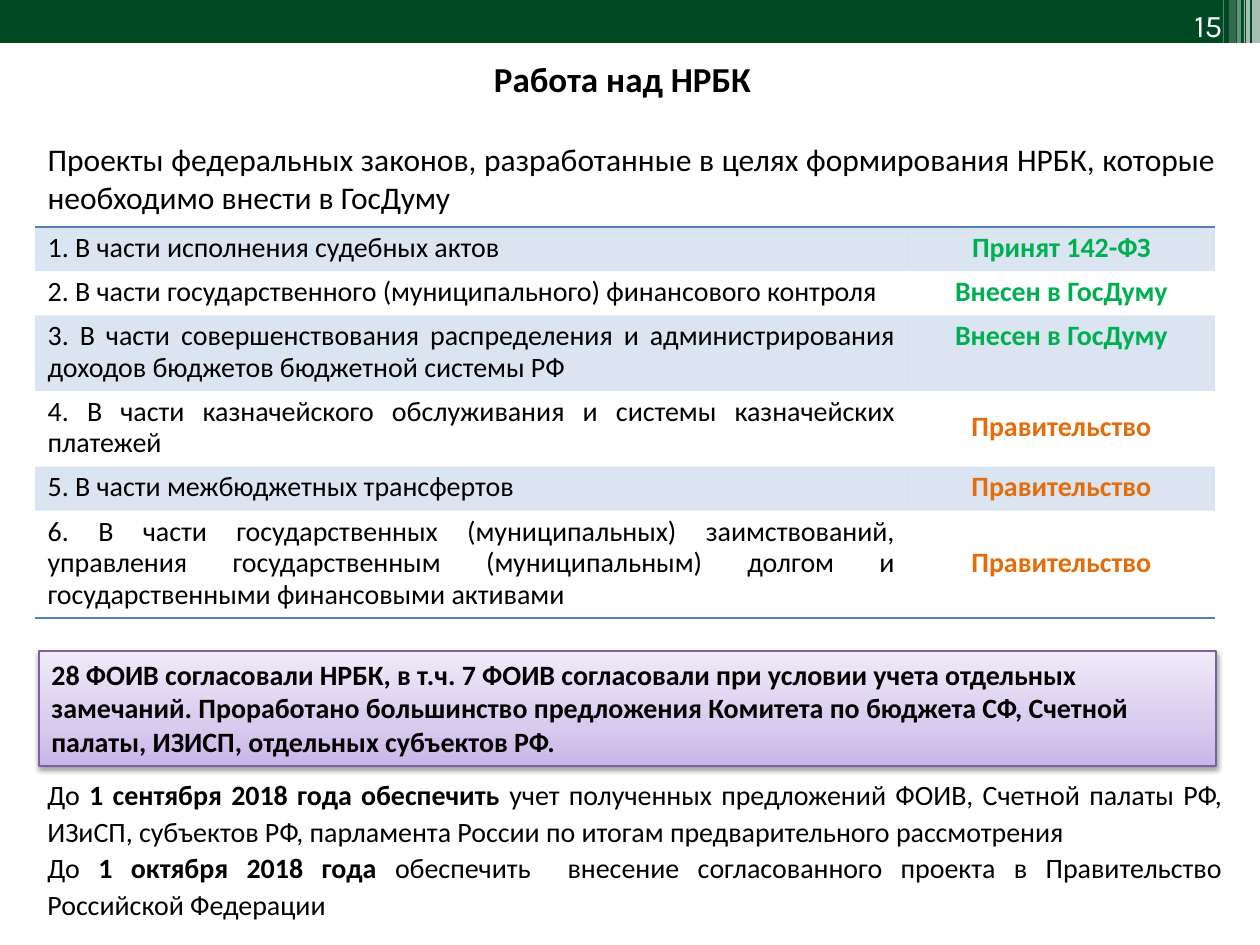
from dataclasses import dataclass

from lxml import etree
from pptx import Presentation
from pptx.dml.color import RGBColor
from pptx.enum.shapes import MSO_SHAPE
from pptx.enum.text import MSO_ANCHOR, MSO_AUTO_SIZE, PP_ALIGN
from pptx.oxml import parse_xml
from pptx.oxml.ns import nsdecls, qn
from pptx.util import Pt

RECT = MSO_SHAPE.RECTANGLE
TOP, MIDDLE = MSO_ANCHOR.TOP, MSO_ANCHOR.MIDDLE
LEFT, CENTER, RIGHT, JUSTIFY = PP_ALIGN.LEFT, PP_ALIGN.CENTER, PP_ALIGN.RIGHT, PP_ALIGN.JUSTIFY

TITLE = "Работа над НРБК"
PAGE_NUMBER = "15"
INTRO = ("Проекты федеральных законов, разработанные в целях формирования НРБК, "
         "которые необходимо внести в ГосДуму")
# Bill, status, number of text lines, anchor of the status
BILLS = [
    ("1. В части исполнения судебных актов", "Принят 142-ФЗ", 1, MIDDLE),
    ("2. В части государственного (муниципального) финансового контроля",
     "Внесен в ГосДуму", 1, MIDDLE),
    ("3. В части совершенствования распределения и администрирования доходов "
     "бюджетов бюджетной системы РФ", "Внесен в ГосДуму", 2, TOP),
    ("4. В части казначейского обслуживания и системы казначейских платежей",
     "Правительство", 2, MIDDLE),
    ("5. В части межбюджетных трансфертов", "Правительство", 1, MIDDLE),
    ("6. В части государственных (муниципальных) заимствований, управления "
     "государственным (муниципальным) долгом и государственными финансовыми активами ",
     "Правительство", 3, MIDDLE),
]
APPROVALS = ("28 ФОИВ согласовали НРБК, в т.ч. 7 ФОИВ согласовали при условии учета "
             "отдельных замечаний. Проработано большинство предложения Комитета по "
             "бюджета СФ, Счетной палаты, ИЗИСП, отдельных субъектов РФ.")
# Each deadline: plain lead, bold date, plain task
DEADLINES = [
    ("До ", "1 сентября 2018 года обеспечить ",
     "учет полученных предложений ФОИВ, Счетной палаты РФ, ИЗиСП, субъектов РФ, "
     "парламента России по итогам предварительного рассмотрения"),
    ("До ", "1 октября 2018 года ",
     "обеспечить  внесение согласованного проекта в Правительство Российской Федерации "),
]
# Header stripes: left, width, height in px, opacity in percent
STRIPES = [(1252, 8, 43, 65), (1246, 4, 43, 65), (1244, 1, 43, 60),
           (1237, 4, 43, 40), (1229, 7, 45, 20), (1223, 1, 45, 30)]


@dataclass(frozen=True)
class Theme:
    font: str = "Calibri"
    number_font: str = "Karla"
    text: str = "000000"
    white: str = "FFFFFF"
    header: str = "004821"
    table: str = "4F81BD"
    done: str = "00B050"
    waiting: str = "E46C0A"
    box_line: str = "7D60A0"
    box_stops: tuple = ((0, "C9B5E8"), (35, "D8CBEE"), (100, "F0EAF9"))
    title_size: int = 20
    intro_size: int = 18
    number_size: int = 18
    body_size: int = 16


THEME = Theme()
PX = 914400 / 126
NO_TABLE_STYLE = "{2D5ABB26-0587-4C30-8999-92F81FD0307C}"


def px(*lengths):
    return [round(length * PX) for length in lengths]


def set_fill(fill, color, holder, opacity=100):
    """Fill with a solid colour; holder is the XML element that owns the fill."""
    fill.solid()
    fill.fore_color.rgb = RGBColor.from_string(color)
    if opacity < 100:
        clr = holder.find(qn("a:solidFill")).find(qn("a:srgbClr"))
        etree.SubElement(clr, qn("a:alpha")).set("val", str(opacity * 1000))


def style(paragraph, size, color=THEME.text, bold=False, align=LEFT, spacing=None,
          font=THEME.font):
    paragraph.alignment = align
    if spacing:
        paragraph.line_spacing = Pt(spacing)
    paragraph.font.name = font
    paragraph.font.size = Pt(size)
    paragraph.font.bold = bold
    paragraph.font.color.rgb = RGBColor.from_string(color)


def write(frame, text, size, **look):
    frame.word_wrap = True
    frame.auto_size = MSO_AUTO_SIZE.NONE
    frame.vertical_anchor = TOP
    frame.text = text
    style(frame.paragraphs[0], size, **look)


def write_cell(cell, text, size, anchor=TOP, **look):
    cell.text = text
    cell.vertical_anchor = anchor
    style(cell.text_frame.paragraphs[0], size, **look)


def add_bar(shapes, left, width, height, color, opacity=100):
    bar = shapes.add_shape(RECT, *px(left, 0, width, height))
    bar.shadow.inherit = False
    bar.line.fill.background()
    set_fill(bar.fill, color, bar._element.spPr, opacity)


def add_plain_table(shapes, left, top, widths, heights):
    frame = shapes.add_table(len(heights), len(widths),
                             *px(left, top, sum(widths), sum(heights)))
    table = frame.table
    table.first_row = table.horz_banding = False
    table._tbl.tblPr.find(qn("a:tableStyleId")).text = NO_TABLE_STYLE
    for column, width in zip(table.columns, px(*widths)):
        column.width = width
    for row, height in zip(table.rows, px(*heights)):
        row.height = height
    for cell in table.iter_cells():
        cell.fill.background()
    return table


def add_border(cell, side):
    cell._tc.get_or_add_tcPr().insert(0, parse_xml(
        f'<a:{side} {nsdecls("a")} w="12700"><a:solidFill><a:srgbClr val="{THEME.table}"/>'
        f'</a:solidFill></a:{side}>'))


def add_bills(shapes):
    heights = [int(12.6 + 31.5 * lines) for _, _, lines, _ in BILLS]
    table = add_plain_table(shapes, 35, 227, [873, 307], heights)
    for index, (bill, status, _, anchor) in enumerate(BILLS):
        color = THEME.waiting if status == "Правительство" else THEME.done
        write_cell(table.cell(index, 0), bill, THEME.body_size, MIDDLE,
                   align=JUSTIFY, spacing=18)
        write_cell(table.cell(index, 1), status, THEME.body_size, anchor, color=color,
                   bold=True, align=CENTER, spacing=18)
        for cell in table.rows[index].cells:
            if index % 2 == 0:
                set_fill(cell.fill, THEME.table, cell._tc.get_or_add_tcPr(), 20)
            if index == 0:
                add_border(cell, "lnT")
            if index == len(BILLS) - 1:
                add_border(cell, "lnB")


def add_approvals(shapes):
    box = shapes.add_shape(RECT, *px(39, 651, 1177, 115))
    box.line.color.rgb = RGBColor.from_string(THEME.box_line)
    box.line.width = Pt(0.75)
    stops = "".join(f'<a:gs pos="{pos * 1000}"><a:srgbClr val="{color}"/></a:gs>'
                    for pos, color in THEME.box_stops)
    line = box._element.spPr.find(qn("a:ln"))
    line.addprevious(parse_xml(
        f'<a:gradFill {nsdecls("a")}><a:gsLst>{stops}</a:gsLst>'
        '<a:lin ang="16200000" scaled="0"/></a:gradFill>'))
    line.addnext(parse_xml(
        f'<a:effectLst {nsdecls("a")}><a:outerShdw blurRad="40000" dist="20000" '
        'dir="5400000" rotWithShape="0"><a:srgbClr val="000000"><a:alpha val="38000"/>'
        '</a:srgbClr></a:outerShdw></a:effectLst>'))
    write(box.text_frame, APPROVALS, THEME.body_size, bold=True)


def add_deadlines(shapes):
    frame = shapes.add_textbox(*px(35, 768, 1200, 161)).text_frame
    frame.word_wrap = True
    for index, parts in enumerate(DEADLINES):
        paragraph = frame.add_paragraph() if index else frame.paragraphs[0]
        style(paragraph, THEME.body_size, align=JUSTIFY, spacing=21)
        for part, bold in zip(parts, (False, True, False)):
            run = paragraph.add_run()
            run.text = part
            run.font.bold = bold


def main():
    deck = Presentation()
    deck.slide_width, deck.slide_height = px(1260, 945)
    shapes = deck.slides.add_slide(deck.slide_layouts[6]).shapes

    add_bar(shapes, 0, 1260, 43, THEME.header)
    for left, width, height, opacity in STRIPES:
        add_bar(shapes, left, width, height, THEME.white, opacity)
    number = shapes.add_textbox(*px(1122, 0, 113, 47))
    write(number.text_frame, PAGE_NUMBER, THEME.number_size, color=THEME.white,
          align=RIGHT, font=THEME.number_font)

    intro = add_plain_table(shapes, 35, 135, [1193], [88])
    write_cell(intro.cell(0, 0), INTRO, THEME.intro_size, align=JUSTIFY)
    add_bills(shapes)
    title = add_plain_table(shapes, 26, 53, [1193], [54])
    write_cell(title.cell(0, 0), TITLE, THEME.title_size, bold=True, align=CENTER)
    add_deadlines(shapes)
    add_approvals(shapes)
    deck.save("out.pptx")


if __name__ == "__main__":
    main()
